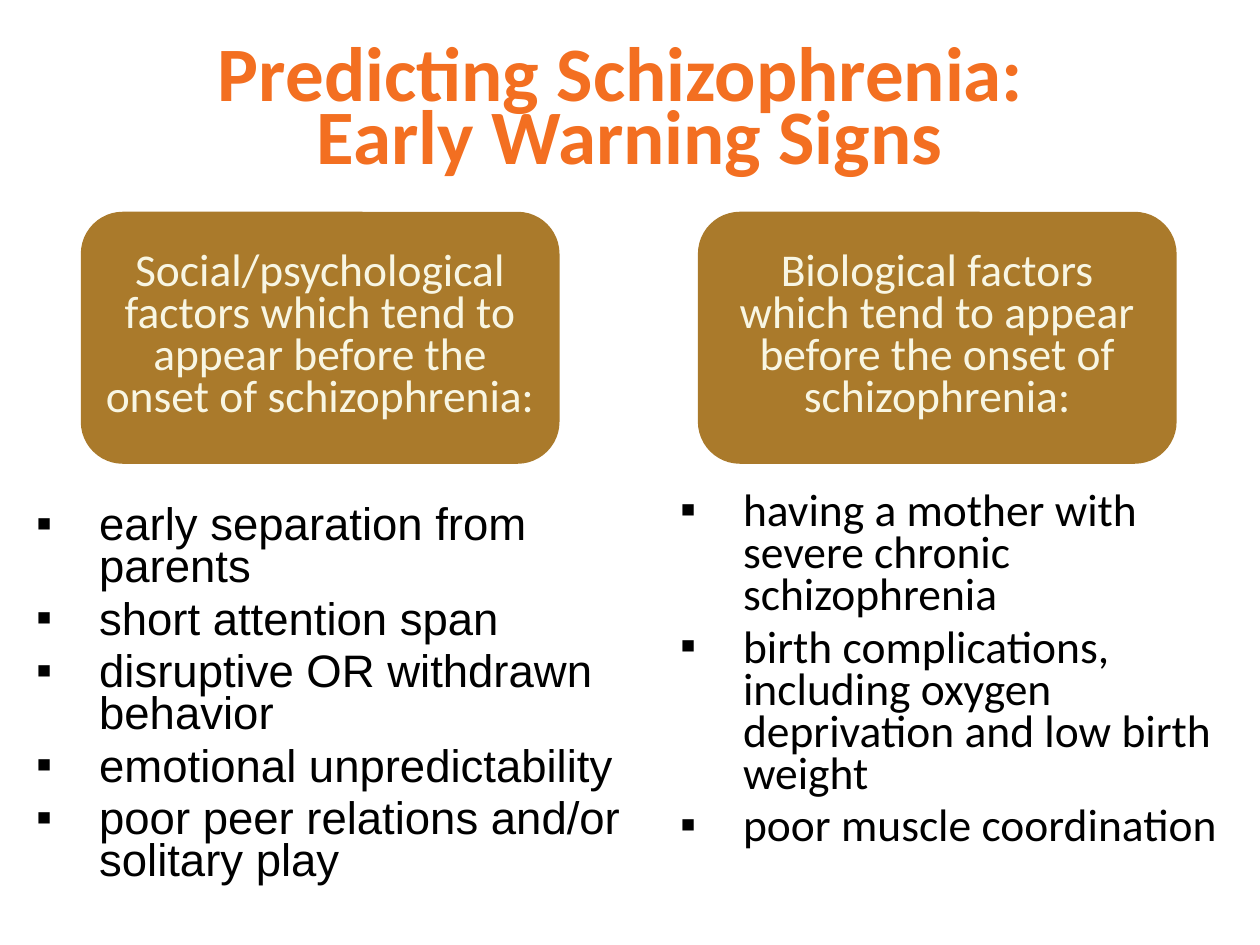
from dataclasses import dataclass

from lxml.etree import SubElement
from pptx import Presentation
from pptx.dml.color import RGBColor
from pptx.enum.shapes import MSO_SHAPE
from pptx.enum.text import MSO_ANCHOR as Anchor, PP_ALIGN as Align
from pptx.oxml.ns import qn
from pptx.slide import Slide
from pptx.text.text import _Paragraph as Paragraph
from pptx.util import Cm, Pt

ORANGE = RGBColor(0xF3, 0x6F, 0x21)
BROWN = RGBColor(0xAA, 0x7A, 0x2B)
CREAM = RGBColor(0xF8, 0xF6, 0xE3)
BLACK = RGBColor(0x00, 0x00, 0x00)

TITLE_FONT = {"name": "Calibri", "size": Pt(44), "bold": True}
BODY_FONT = {"name": "Calibri", "size": Pt(26)}
TITLE_FORMAT = {"alignment": Align.CENTER, "line_spacing": Pt(36)}
BODY_FORMAT = {"line_spacing": Pt(24), "space_after": Pt(6)}
HEADING_FORMAT = BODY_FORMAT | {"alignment": Align.CENTER}
LIST_FORMAT = BODY_FORMAT | {"alignment": Align.LEFT}


@dataclass(frozen=True)
class Area:
    left: float
    top: float
    width: float
    height: float

    def lengths(self) -> list[Cm]:
        return [Cm(value) for value in (self.left, self.top, self.width, self.height)]


@dataclass(frozen=True)
class FactorColumn:
    heading: str
    heading_area: Area
    signs: tuple[str, ...]
    signs_area: Area
    signs_font: str


COLUMNS = (
    FactorColumn(
        "Social/psychological factors which tend to appear before the onset of schizophrenia:",
        Area(1.63, 4.27, 9.65, 5.08),
        (
            "early separation from parents",
            "short attention span",
            "disruptive OR withdrawn behavior",
            "emotional unpredictability",
            "poor peer relations and/or solitary play",
        ),
        Area(0.48, 10.11, 12.83, 7.95),
        "Arial",
    ),
    FactorColumn(
        "Biological factors which tend to appear before the onset of schizophrenia:",
        Area(14.07, 4.27, 9.65, 5.08),
        (
            "having a mother with severe chronic schizophrenia",
            "birth complications, including oxygen deprivation and low birth weight",
            "poor muscle coordination",
        ),
        Area(13.46, 9.83, 11.68, 8.38),
        "Calibri",
    ),
)


def write(paragraph: Paragraph, text: str, layout: dict, font: dict, color: RGBColor) -> None:
    paragraph.text = text
    for name, value in layout.items():
        setattr(paragraph, name, value)
    for run in paragraph.runs:
        for name, value in font.items():
            setattr(run.font, name, value)
        run.font.color.rgb = color


def add_bullet(paragraph: Paragraph) -> None:
    properties = paragraph._p.get_or_add_pPr()
    properties.set("marL", str(Cm(1.27)))
    properties.set("indent", str(-Cm(1.27)))
    SubElement(properties, qn("a:buFont"), typeface="Arial")
    SubElement(properties, qn("a:buChar"), char="▪")


def add_title(slide: Slide, text: str, area: Area) -> None:
    frame = slide.shapes.add_textbox(*area.lengths()).text_frame
    frame.word_wrap = True
    frame.vertical_anchor = Anchor.MIDDLE
    write(frame.paragraphs[0], text, TITLE_FORMAT, TITLE_FONT, ORANGE)


def add_heading(slide: Slide, text: str, area: Area) -> None:
    shape = slide.shapes.add_shape(MSO_SHAPE.ROUNDED_RECTANGLE, *area.lengths())
    shape.shadow.inherit = False
    shape.fill.solid()
    shape.fill.fore_color.rgb = BROWN
    shape.line.fill.background()
    frame = shape.text_frame
    frame.word_wrap = True
    frame.vertical_anchor = Anchor.MIDDLE
    write(frame.paragraphs[0], text, HEADING_FORMAT, BODY_FONT, CREAM)


def add_signs(slide: Slide, signs: tuple[str, ...], area: Area, font_name: str) -> None:
    frame = slide.shapes.add_textbox(*area.lengths()).text_frame
    frame.word_wrap = True
    for index, sign in enumerate(signs):
        paragraph = frame.add_paragraph() if index else frame.paragraphs[0]
        write(paragraph, sign, LIST_FORMAT, BODY_FONT | {"name": font_name}, BLACK)
        add_bullet(paragraph)


def main() -> None:
    presentation = Presentation()
    presentation.slide_width = Cm(25.4)
    presentation.slide_height = Cm(19.05)
    slide = presentation.slides.add_slide(presentation.slide_layouts[6])
    add_title(
        slide,
        "Predicting Schizophrenia: \vEarly Warning Signs",
        Area(1.27, 0.76, 22.86, 3.18),
    )
    for column in COLUMNS:
        add_signs(slide, column.signs, column.signs_area, column.signs_font)
        add_heading(slide, column.heading, column.heading_area)
    presentation.save("out.pptx")


if __name__ == "__main__":
    main()
